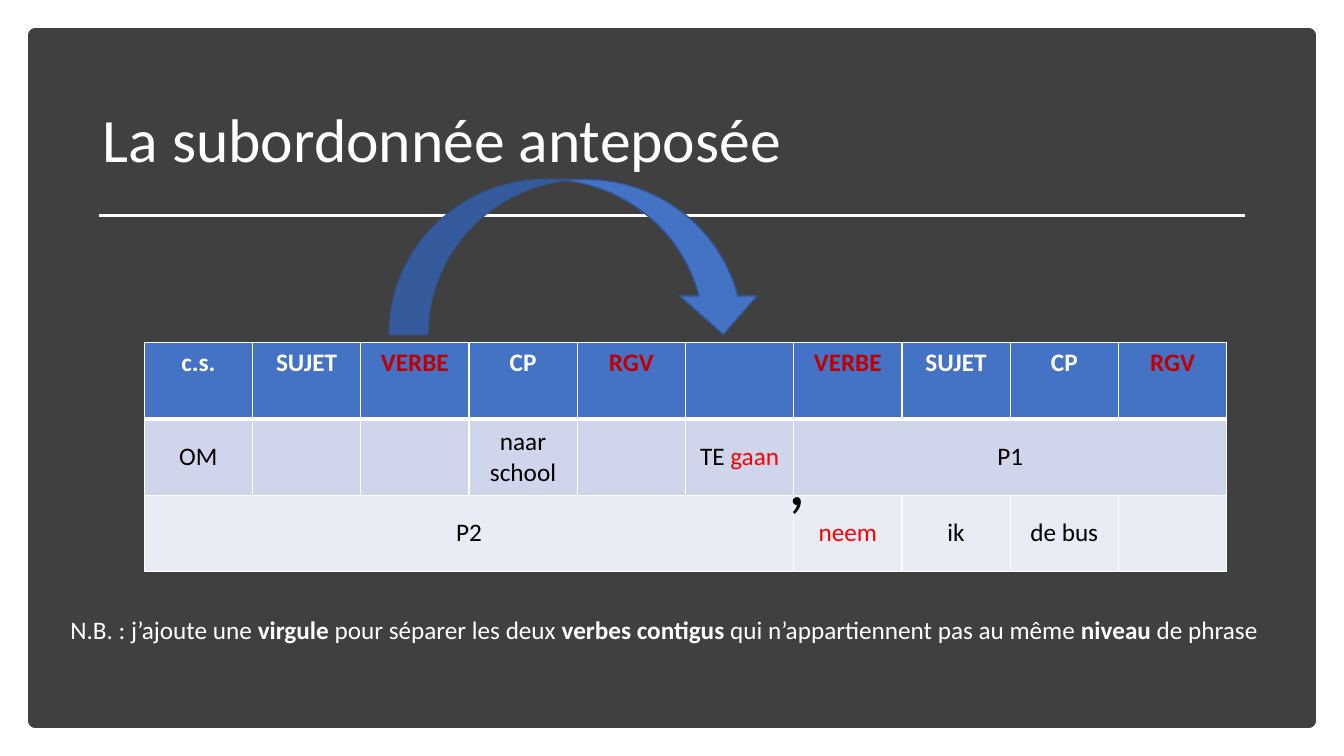
from lxml import etree
from pptx import Presentation
from pptx.dml.color import RGBColor
from pptx.enum.shapes import MSO_CONNECTOR, MSO_SHAPE
from pptx.enum.text import MSO_ANCHOR, MSO_AUTO_SIZE, PP_ALIGN
from pptx.oxml.ns import qn
from pptx.util import Inches, Pt

LEFT, CENTER = PP_ALIGN.LEFT, PP_ALIGN.CENTER
TOP, MIDDLE = MSO_ANCHOR.TOP, MSO_ANCHOR.MIDDLE
STRAIGHT = MSO_CONNECTOR.STRAIGHT
RECTANGLE, CURVED_ARROW = MSO_SHAPE.RECTANGLE, MSO_SHAPE.CURVED_DOWN_ARROW
NO_FIT = MSO_AUTO_SIZE.NONE

FONT = "Calibri"
WHITE, BLACK, DARK = "FFFFFF", "000000", "404040"
BLUE, BLUE_EDGE = "4472C4", "325491"
RED, VERB_RED = "FF0000", "C00000"
ROW_FILLS = [BLUE, "CFD5EA", "E9EBF5"]

HEADERS = ["c.s.", "SUJET", "VERBE", "CP", "RGV", "", "VERBE", "SUJET", "CP", "RGV"]
# (row, column): runs, each a text with its format
CLAUSES = {
    (1, 0): [("OM", {})],
    (1, 3): [("naar school", {})],
    (1, 5): [("TE ", {}), ("gaan", {"color": RED})],
    (1, 6): [("P1", {})],
    (2, 0): [("P2", {})],
    (2, 6): [("neem", {"color": RED})],
    (2, 7): [("ik", {})],
    (2, 8): [("de bus", {})],
}
MERGES = [((1, 6), (1, 9)), ((2, 0), (2, 5))]
BOLD = {"bold": True}
NOTE = [
    ("N.B. : j’ajoute une ", {}),
    ("virgule", BOLD),
    (" pour séparer les deux ", {}),
    ("verbes contigus ", BOLD),
    ("qui n’appartiennent pas au même ", {}),
    ("niveau", BOLD),
    (" de phrase", {}),
]


def rgb(value):
    return RGBColor.from_string(value)


def write(tf, runs, size=18, color=WHITE, bold=False, align=LEFT, anchor=TOP):
    """Fill a text frame with one paragraph; each run may override colour and bold."""
    tf.word_wrap = True
    tf.vertical_anchor = anchor
    p = tf.paragraphs[0]
    p.alignment = align
    for text, fmt in runs:
        r = p.add_run()
        r.text = text
        r.font.name = FONT
        r.font.size = Pt(size)
        r.font.bold = fmt.get("bold", bold)
        r.font.color.rgb = rgb(fmt.get("color", color))
    return p


def place(sp, x, y, w, h):
    sp.left, sp.top, sp.width, sp.height = map(Inches, (x, y, w, h))


def add_filled_shape(s, kind, x, y, w, h, fill, line, line_width):
    sp = s.shapes.add_shape(kind, *map(Inches, (x, y, w, h)))
    sp.shadow.inherit = False
    sp.fill.solid()
    sp.fill.fore_color.rgb = rgb(fill)
    sp.line.color.rgb = rgb(line)
    sp.line.width = Pt(line_width)
    return sp


def add_text(s, x, y, w, h, runs, **fmt):
    sp = s.shapes.add_textbox(*map(Inches, (x, y, w, h)))
    write(sp.text_frame, runs, **fmt)


def add_background(s, x, y, w, h):
    panel = add_filled_shape(s, RECTANGLE, x, y, w, h, DARK, DARK, 10)
    s.shapes.title.element.addprevious(panel.element)


def add_heading(s, x, y, w, h):
    title = s.shapes.title
    place(title, x, y, w, h)
    p = write(title.text_frame, [("La subordonnée anteposée", {})], size=44, anchor=MIDDLE)
    p.line_spacing = 0.9
    title.text_frame.auto_size = NO_FIT
    rule_y = Inches(y + h)
    rule = s.shapes.add_connector(STRAIGHT, Inches(x + 0.06), rule_y, Inches(x + w - 0.07), rule_y)
    rule.line.color.rgb = rgb(WHITE)
    rule.line.width = Pt(1.75)
    etree.SubElement(rule.element.spPr, qn("a:effectLst"))


def set_borders(cell, widths):
    tc_pr = cell._tc.get_or_add_tcPr()
    for side, width in widths.items():
        ln = etree.SubElement(tc_pr, qn(f"a:ln{side}"), w=str(Pt(width)))
        fill = etree.SubElement(ln, qn("a:solidFill"))
        etree.SubElement(fill, qn("a:srgbClr"), val=WHITE)


def add_clause_table(s, x, y, w, h):
    rows, cols = len(ROW_FILLS), len(HEADERS)
    table = s.shapes.add_table(rows, cols, *map(Inches, (x, y, w, h))).table
    for column in table.columns:
        column.width = Inches(w / cols)
    for i, row in enumerate(table.rows):
        row.height = Inches(h / rows)
        for j, cell in enumerate(row.cells):
            set_borders(cell, {"L": 1, "R": 1, "T": 3 if i == 1 else 1, "B": 3 if i == 0 else 1})
            cell.fill.solid()
            cell.fill.fore_color.rgb = rgb(ROW_FILLS[i])
            if i == 0 and HEADERS[j]:
                color = VERB_RED if HEADERS[j] in ("VERBE", "RGV") else WHITE
                write(cell.text_frame, [(HEADERS[j], {})], color=color, bold=True, align=CENTER)
            elif (i, j) in CLAUSES:
                write(cell.text_frame, CLAUSES[i, j], color=BLACK, align=CENTER)
                cell.vertical_anchor = MIDDLE
    for first, last in MERGES:
        table.cell(*first).merge(table.cell(*last))


def main():
    prs = Presentation()
    prs.slide_width, prs.slide_height = Inches(13.33), Inches(7.5)
    s = prs.slides.add_slide(prs.slide_layouts[5])
    add_background(s, 0.35, 0.35, 12.63, 6.8)
    add_heading(s, 0.92, 0.69, 11.5, 1.45)
    add_clause_table(s, 1.43, 3.4, 10.74, 2.27)
    add_filled_shape(s, CURVED_ARROW, 3.86, 1.78, 3.7, 1.54, BLUE, BLUE_EDGE, 1)
    add_text(s, 7.72, 4.27, 0.69, 0.94, [(",", {})], size=50, color=BLACK)
    add_text(s, 0.6, 6.05, 12.14, 0.4, NOTE)
    prs.save("out.pptx")


if __name__ == "__main__":
    main()
